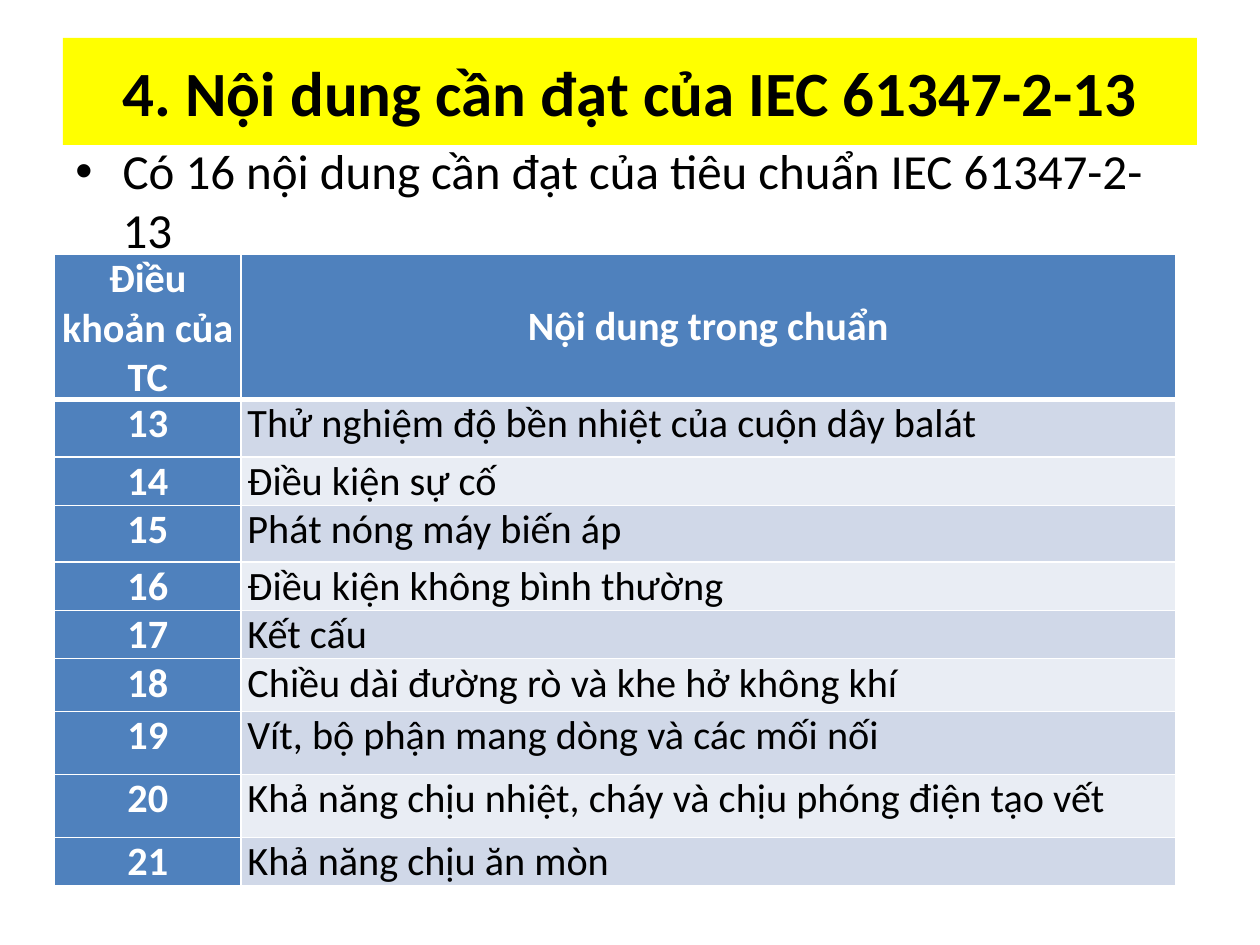
from lxml.etree import SubElement
from pptx import Presentation
from pptx.dml.color import RGBColor
from pptx.enum.shapes import MSO_SHAPE as Shape
from pptx.enum.text import MSO_ANCHOR as Anchor, PP_ALIGN as Align
from pptx.oxml.ns import qn
from pptx.util import Pt

YELLOW = RGBColor(0xFF, 0xFF, 0x00)
BLACK = RGBColor(0x00, 0x00, 0x00)
WHITE = RGBColor(0xFF, 0xFF, 0xFF)
BLUE = RGBColor(0x4F, 0x81, 0xBD)
BAND_DARK = RGBColor(0xD0, 0xD8, 0xE8)
BAND_LIGHT = RGBColor(0xE9, 0xED, 0xF4)

FONT = "Calibri"
COLUMN_WIDTHS = (106.6, 534.2)
HEADER_HEIGHT = 81.4
HEADER = ("Điều khoản của TC", "Nội dung trong chuẩn")
FIRST_CLAUSE = 13
CLAUSES = (
    ("Thử nghiệm độ bền nhiệt của cuộn dây balát", 33),
    ("Điều kiện sự cố", 26.6),
    ("Phát nóng máy biến áp", 32.4),
    ("Điều kiện không bình thường", 26.6),
    ("Kết cấu", 26.6),
    ("Chiều dài đường rò và khe hở không khí", 30.2),
    ("Vít, bộ phận mang dòng và các mối nối", 36),
    ("Khả năng chịu nhiệt, cháy và chịu phóng điện tạo vết", 36),
    ("Khả năng chịu ăn mòn", 26.6),
)


def write(frame, text, size, color, bold=False, align=Align.LEFT):
    frame.word_wrap = True
    frame.text = text
    paragraph = frame.paragraphs[0]
    paragraph.alignment = align
    font = paragraph.runs[0].font
    font.name, font.size, font.bold = FONT, Pt(size), bold
    font.color.rgb = color
    return paragraph


def add_title(slide, text):
    banner = slide.shapes.add_shape(Shape.RECTANGLE, Pt(36), Pt(21.6), Pt(648), Pt(61.2))
    banner.shadow.inherit = False
    banner.fill.solid()
    banner.fill.fore_color.rgb = YELLOW
    banner.line.fill.background()
    banner.text_frame.vertical_anchor = Anchor.MIDDLE
    write(banner.text_frame, text, 36, BLACK, True, Align.CENTER)


def add_bullet(slide, text):
    summary = slide.shapes.add_textbox(Pt(36), Pt(77), Pt(648), Pt(405.4))
    paragraph = write(summary.text_frame, text, 28, BLACK)
    paragraph.space_before = Pt(5.6)
    properties = paragraph._p.get_or_add_pPr()
    properties.set("marL", str(Pt(27)))
    properties.set("indent", str(Pt(-27)))
    SubElement(properties, qn("a:buFont"), typeface="Arial")
    SubElement(properties, qn("a:buChar"), char="•")


def add_borders(cell, top, bottom):
    properties = cell._tc.get_or_add_tcPr()
    for side, width in (("L", 1), ("R", 1), ("T", top), ("B", bottom)):
        border = SubElement(properties, qn(f"a:ln{side}"), w=str(Pt(width)))
        fill = SubElement(border, qn("a:solidFill"))
        SubElement(fill, qn("a:srgbClr"), val=str(WHITE))


def fill_cell(cell, text, fill, is_heading, align, anchor, top=1, bottom=1):
    cell.margin_left = cell.margin_right = Pt(3.6)
    cell.margin_top = cell.margin_bottom = 0
    cell.vertical_anchor = anchor
    add_borders(cell, top, bottom)
    cell.fill.solid()
    cell.fill.fore_color.rgb = fill
    color = WHITE if is_heading else BLACK
    paragraph = write(cell.text_frame, text, 23, color, is_heading, align)
    paragraph.space_before = paragraph.space_after = Pt(6)


def add_clause_table(slide):
    heights = [HEADER_HEIGHT] + [height for _, height in CLAUSES]
    table = slide.shapes.add_table(
        len(heights), len(COLUMN_WIDTHS), Pt(31.2), Pt(145.4),
        Pt(sum(COLUMN_WIDTHS)), Pt(sum(heights)),
    ).table
    for column, width in zip(table.columns, COLUMN_WIDTHS):
        column.width = Pt(width)
    for row, height in zip(table.rows, heights):
        row.height = Pt(height)
    for index, heading in enumerate(HEADER):
        fill_cell(table.cell(0, index), heading, BLUE, True, Align.CENTER, Anchor.MIDDLE, bottom=3)
    for index, (content, _) in enumerate(CLAUSES, 1):
        top = 3 if index == 1 else 1
        band = BAND_DARK if index % 2 else BAND_LIGHT
        number = str(FIRST_CLAUSE + index - 1)
        fill_cell(table.cell(index, 0), number, BLUE, True, Align.CENTER, Anchor.TOP, top)
        fill_cell(table.cell(index, 1), content, band, False, Align.LEFT, Anchor.TOP, top)


def main():
    deck = Presentation()
    deck.slide_width, deck.slide_height = Pt(720), Pt(540)
    slide = deck.slides.add_slide(deck.slide_layouts[6])
    add_title(slide, "4. Nội dung cần đạt của IEC 61347-2-13")
    add_bullet(slide, "Có 16 nội dung cần đạt của tiêu chuẩn IEC 61347-2-13")
    add_clause_table(slide)
    deck.save("out.pptx")


if __name__ == "__main__":
    main()
